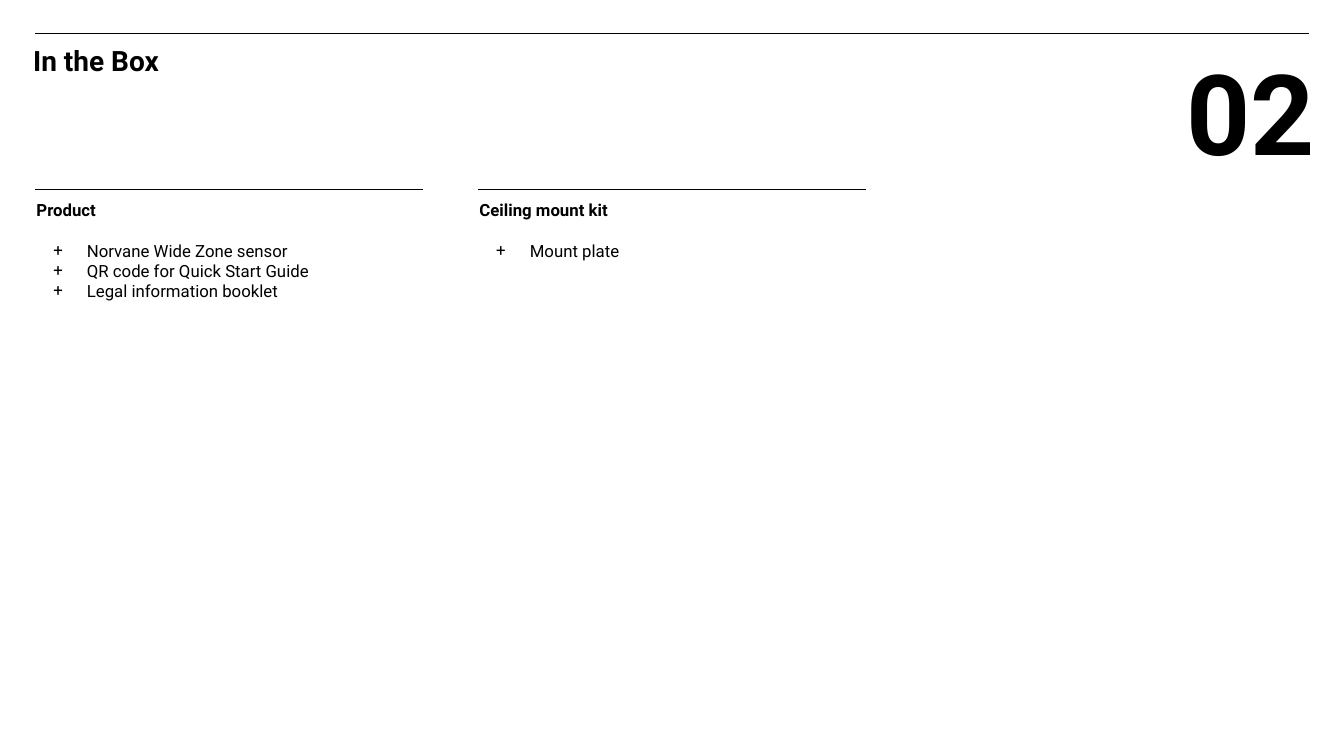
from dataclasses import dataclass

from lxml.etree import SubElement
from pptx import Presentation
from pptx.dml.color import RGBColor
from pptx.enum.shapes import MSO_CONNECTOR as Conn
from pptx.enum.text import MSO_ANCHOR as Anchor, MSO_AUTO_SIZE as AutoSize, PP_ALIGN as Align
from pptx.oxml.ns import qn
from pptx.shapes.shapetree import GroupShapes
from pptx.util import Pt


@dataclass(frozen=True)
class Theme:
    font: str = "Roboto"
    ink: RGBColor = RGBColor(0, 0, 0)
    paper: RGBColor = RGBColor(255, 255, 255)
    rule: float = 0.75
    inset: float = 7.2
    title: float = 20
    number: float = 80
    body: float = 12


@dataclass(frozen=True)
class Box:
    left: float
    top: float
    width: float
    height: float


@dataclass(frozen=True)
class KitList:
    heading: str
    items: tuple[str, ...]
    height: float


THEME = Theme()
KITS = (
    KitList("Product", ("Norvane Wide Zone sensor", "QR code for Quick Start Guide",
                        "Legal information booklet"), 58.3),
    KitList("Ceiling mount kit", ("Mount plate",), 43.9),
)
MARGIN, HEADER_TOP, HEADER_WIDTH = 25.2, 23.8, 910
KIT_TOP, KIT_WIDTH, KIT_PITCH = 135.4, 277.2, 316.4
KIT_OVERHANG, HEADING_HEIGHT = 6.2, 29.2
BULLET_INDENT, BULLET_HANG = 36, 24


def add_rule(shapes: GroupShapes, left: float, top: float, width: float) -> None:
    s = shapes.add_connector(Conn.STRAIGHT, Pt(left), Pt(top), Pt(left + width), Pt(top))
    s.line.color.rgb = THEME.ink
    s.line.width = Pt(THEME.rule)
    SubElement(s._element.spPr, qn("a:effectLst"))


def add_text(shapes: GroupShapes, box: Box, lines: tuple[str, ...], size: float,
             bold: bool = True, align: Align = Align.LEFT, bullet: str = "") -> None:
    s = shapes.add_textbox(Pt(box.left), Pt(box.top), Pt(box.width), Pt(box.height))
    tf = s.text_frame
    tf.word_wrap = True
    tf.auto_size = AutoSize.SHAPE_TO_FIT_TEXT
    tf.vertical_anchor = Anchor.TOP
    tf.margin_left = tf.margin_right = tf.margin_top = tf.margin_bottom = Pt(THEME.inset)
    for i, line in enumerate(lines):
        p = tf.add_paragraph() if i else tf.paragraphs[0]
        p.alignment = align
        r = p.add_run()
        r.text = line
        r.font.name, r.font.size, r.font.bold = THEME.font, Pt(size), bold
        r.font.color.rgb = THEME.ink
        if bullet:
            # Hanging indent and bullet character
            pPr = p._p.get_or_add_pPr()
            pPr.set("marL", str(Pt(BULLET_INDENT)))
            pPr.set("indent", str(-Pt(BULLET_HANG)))
            colour = SubElement(pPr, qn("a:buClr"))
            SubElement(colour, qn("a:srgbClr"), val=str(THEME.ink))
            SubElement(pPr, qn("a:buFont"), typeface=THEME.font)
            SubElement(pPr, qn("a:buChar"), char=bullet)


def add_kit(shapes: GroupShapes, kit: KitList, left: float) -> None:
    text_left, text_width = left - KIT_OVERHANG, KIT_WIDTH + KIT_OVERHANG
    add_rule(shapes, left, KIT_TOP, KIT_WIDTH)
    add_text(shapes, Box(text_left, KIT_TOP, text_width, HEADING_HEIGHT),
             (kit.heading,), THEME.body)
    add_text(shapes, Box(text_left, KIT_TOP + HEADING_HEIGHT, text_width, kit.height),
             kit.items, THEME.body, bold=False, bullet="+")


def main() -> None:
    prs = Presentation()
    prs.slide_width, prs.slide_height = Pt(960), Pt(540)
    slide = prs.slides.add_slide(prs.slide_layouts[6])
    slide.background.fill.solid()
    slide.background.fill.fore_color.rgb = THEME.paper

    # Header: rule, title and section number
    header = slide.shapes.add_group_shape().shapes
    add_rule(header, MARGIN, HEADER_TOP, HEADER_WIDTH)
    add_text(header, Box(16.6, HEADER_TOP, 463, 38.9), ("In the Box",), THEME.title)
    add_text(header, Box(794.9, HEADER_TOP, 151.2, 111.6), ("02",), THEME.number,
             align=Align.RIGHT)

    # Box contents, one column per kit
    for i, kit in enumerate(KITS):
        add_kit(slide.shapes.add_group_shape().shapes, kit, MARGIN + i * KIT_PITCH)

    prs.save("out.pptx")


if __name__ == "__main__":
    main()
